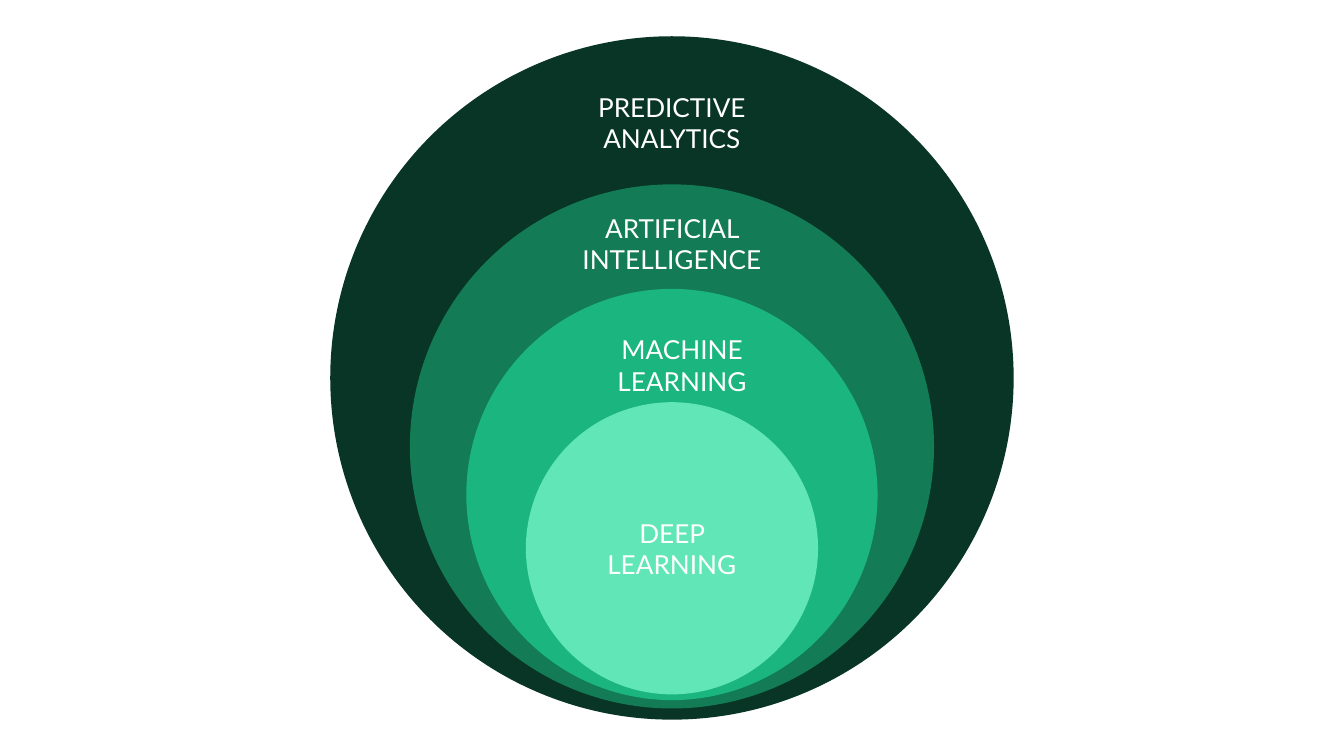
from typing import NamedTuple

from pptx import Presentation
from pptx.dml.color import RGBColor
from pptx.enum.shapes import MSO_SHAPE as Shape
from pptx.enum.text import MSO_ANCHOR as Anchor, PP_ALIGN as Align
from pptx.util import Inches, Pt

WIDE = Inches(10)
HIGH = WIDE * 9 // 16
CELL = WIDE / 100  # square grid, 100 columns across the slide
MID = 50

WHITE = RGBColor(0xFF, 0xFF, 0xFF)
PINE = RGBColor(0x08, 0x35, 0x25)
FOREST = RGBColor(0x13, 0x7C, 0x57)
JADE = RGBColor(0x1B, 0xB5, 0x80)
MINT = RGBColor(0x60, 0xE6, 0xB7)

FONT = {"name": "Lato", "size": Pt(14)}
INSET = Inches(0.1)
FRAME = {"word_wrap": True, "margin_left": INSET, "margin_right": INSET,
         "margin_top": INSET, "margin_bottom": INSET}


class Ring(NamedTuple):
    top: float
    size: float
    fill: RGBColor
    text: str = ""


class Label(NamedTuple):
    mid: float
    top: float
    wide: float
    text: str


RINGS = [
    Ring(2.7, 50.85, PINE),
    Ring(13.72, 39, FOREST),
    Ring(21.5, 30.6, JADE),
    Ring(29.93, 21.74, MINT, "DEEP LEARNING"),
]
LABELS = [
    Label(50.75, 23.84, 19, "MACHINE LEARNING"),
    Label(MID, 14.8, 17.5, "ARTIFICIAL INTELLIGENCE"),
    Label(MID, 5.8, 21.7, "PREDICTIVE ANALYTICS"),
]
LABEL_HIGH = 6.1


def place(mid: float, top: float, wide: float, high: float) -> list[int]:
    """Turn grid cells into left, top, width and height."""
    return [round(n * CELL) for n in (mid - wide / 2, top, wide, high)]


def write(shape, text: str, anchor: Anchor) -> None:
    frame = shape.text_frame
    for key, val in {**FRAME, "vertical_anchor": anchor}.items():
        setattr(frame, key, val)
    para = frame.paragraphs[0]
    para.alignment = Align.CENTER
    run = para.add_run()
    run.text = text
    for key, val in FONT.items():
        setattr(run.font, key, val)
    run.font.color.rgb = WHITE


def draw_ring(slide, ring: Ring) -> None:
    box = place(MID, ring.top, ring.size, ring.size)
    shape = slide.shapes.add_shape(Shape.OVAL, *box)
    shape.shadow.inherit = False
    shape.fill.solid()
    shape.fill.fore_color.rgb = ring.fill
    shape.line.fill.background()
    if ring.text:
        write(shape, ring.text, Anchor.MIDDLE)


def draw_label(slide, label: Label) -> None:
    box = place(label.mid, label.top, label.wide, LABEL_HIGH)
    write(slide.shapes.add_textbox(*box), label.text, Anchor.TOP)


def main() -> None:
    deck = Presentation()
    deck.slide_width, deck.slide_height = WIDE, HIGH
    slide = deck.slides.add_slide(deck.slide_layouts[6])
    for ring in RINGS:
        draw_ring(slide, ring)
    for label in LABELS:
        draw_label(slide, label)
    deck.save("out.pptx")


if __name__ == "__main__":
    main()
